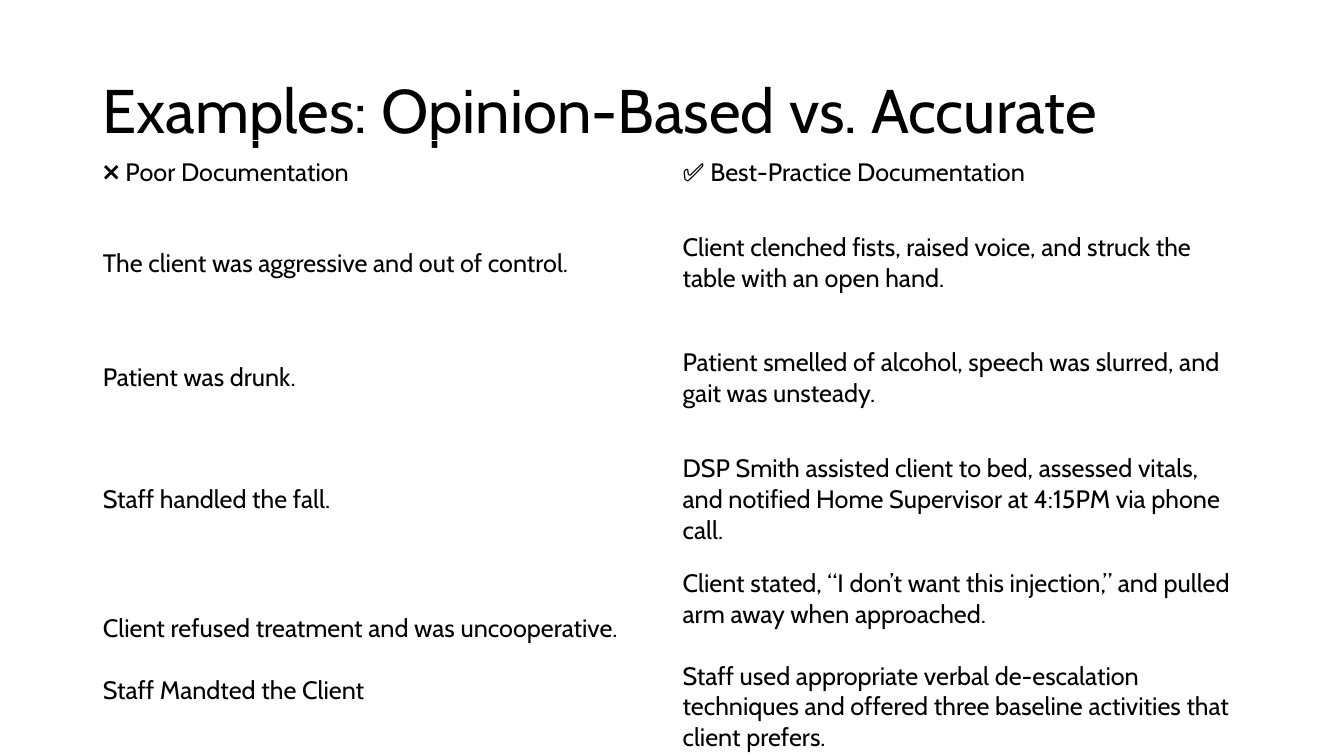
from dataclasses import dataclass

from pptx import Presentation
from pptx import util as u
from pptx.dml.color import RGBColor
from pptx.enum import text

# Content: each cell is a tuple of paragraphs
TITLE = "Examples: Opinion-Based vs. Accurate"
EXAMPLES = [
    (("❌ Poor Documentation",),
     ("✅ Best-Practice Documentation",)),
    (("The client was aggressive and out of control.",),
     ("Client clenched fists, raised voice, and struck the table with an open hand.",)),
    (("Patient was drunk.",),
     ("Patient smelled of alcohol, speech was slurred, and gait was unsteady.",)),
    (("Staff handled the fall.",),
     ("DSP Smith assisted client to bed, assessed vitals, and notified "
      "Home Supervisor at 4:15PM via phone call.",)),
    (("Client refused treatment and was uncooperative.",
      "Staff Mandted the Client"),
     ("Client stated, “I don’t want this injection,” and pulled arm away when approached.",
      "Staff used appropriate verbal de-escalation techniques and offered three "
      "baseline activities that client prefers.")),
]


@dataclass(frozen=True)
class Theme:
    font: str = "Cabin"
    ink: RGBColor = RGBColor(0, 0, 0)
    title_size: int = 44
    body_size: int = 18
    paragraph_gap: int = 22


THEME = Theme()

# Layout in inches
SLIDE_WIDTH, SLIDE_HEIGHT = 13.33, 7.5
MARGIN = 0.92
CONTENT_WIDTH = 11.5
TITLE_TOP, TITLE_HEIGHT = 0.4, 1.45
EXAMPLES_TOP = 1.39
ROW_HEIGHTS = [0.65, 1.14, 1.14, 1.27, 1.91]


def write(paragraph, words, size):
    run = paragraph.add_run()
    run.text = words
    run.font.name = THEME.font
    run.font.size = u.Pt(size)
    run.font.bold = False
    run.font.color.rgb = THEME.ink


def add_title(slide):
    heading = slide.shapes.add_textbox(
        u.Inches(MARGIN), u.Inches(TITLE_TOP),
        u.Inches(CONTENT_WIDTH), u.Inches(TITLE_HEIGHT)).text_frame
    heading.word_wrap = True
    heading.vertical_anchor = text.MSO_ANCHOR.MIDDLE
    heading.paragraphs[0].line_spacing = 0.9
    write(heading.paragraphs[0], TITLE, THEME.title_size)


def fill_cell(cell, paragraphs):
    cell.fill.background()
    cell.vertical_anchor = text.MSO_ANCHOR.MIDDLE
    frame = cell.text_frame
    for index, words in enumerate(paragraphs):
        paragraph = frame.add_paragraph() if index else frame.paragraphs[0]
        if index:
            paragraph.space_before = u.Pt(THEME.paragraph_gap)
        write(paragraph, words, THEME.body_size)


def add_examples(slide):
    columns = len(EXAMPLES[0])
    comparison = slide.shapes.add_table(
        len(EXAMPLES), columns, u.Inches(MARGIN), u.Inches(EXAMPLES_TOP),
        u.Inches(CONTENT_WIDTH), u.Inches(sum(ROW_HEIGHTS))).table
    comparison.first_row = comparison.horz_banding = False
    for column in comparison.columns:
        column.width = u.Inches(CONTENT_WIDTH / columns)
    for row, height, example in zip(comparison.rows, ROW_HEIGHTS, EXAMPLES):
        row.height = u.Inches(height)
        for cell, paragraphs in zip(row.cells, example):
            fill_cell(cell, paragraphs)


def main():
    deck = Presentation()
    deck.slide_width = u.Inches(SLIDE_WIDTH)
    deck.slide_height = u.Inches(SLIDE_HEIGHT)
    slide = deck.slides.add_slide(deck.slide_layouts[6])
    add_title(slide)
    add_examples(slide)
    deck.save("out.pptx")


if __name__ == "__main__":
    main()
